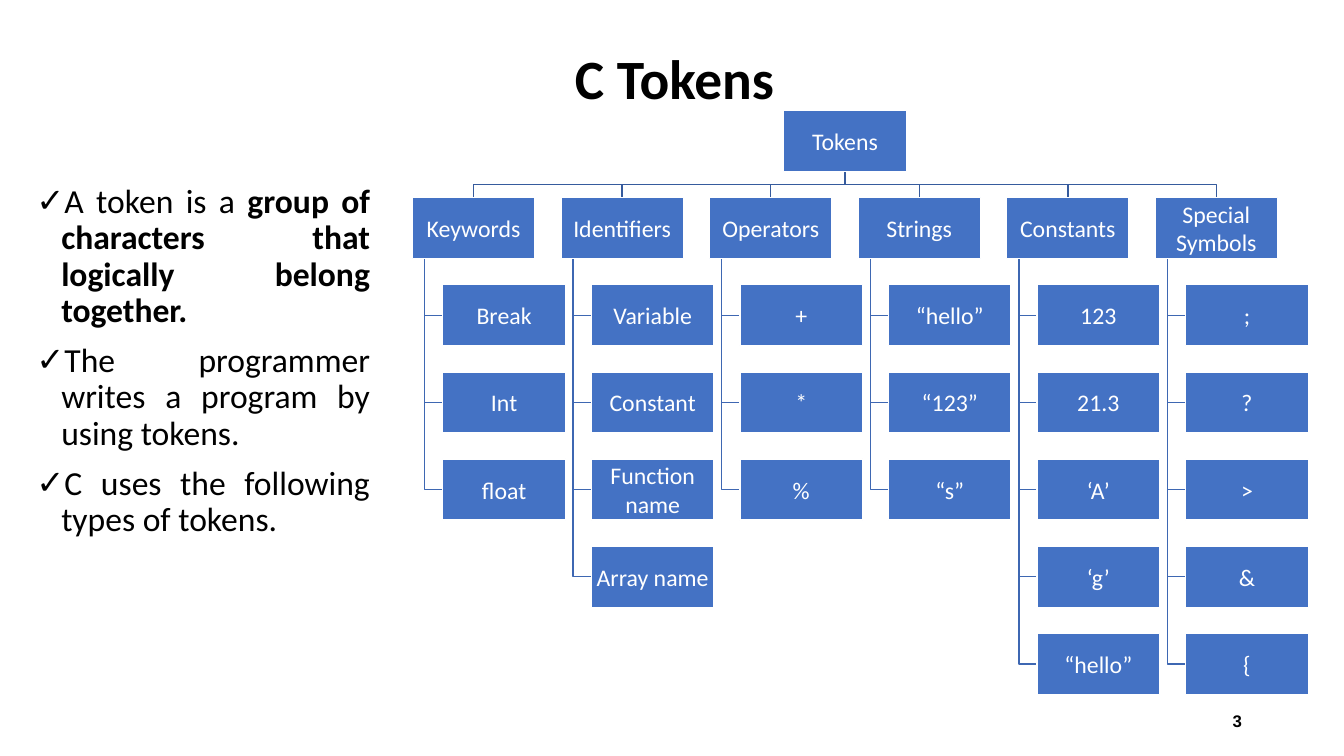
from dataclasses import dataclass

from lxml.etree import SubElement
from pptx import Presentation
from pptx.dml.color import RGBColor
from pptx.enum.shapes import MSO_SHAPE
from pptx.enum.text import MSO_ANCHOR, MSO_AUTO_SIZE, PP_ALIGN
from pptx.oxml.ns import qn
from pptx.util import Cm, Pt


@dataclass(frozen=True)
class Theme:
    """Colours, fonts and type sizes of the slide."""
    ink: str = "000000"
    paper: str = "FFFFFF"
    box: str = "4472C4"
    root_line: str = "365B9D"
    leaf_line: str = "3E67B2"
    font: str = "Calibri"
    number_font: str = "Arial"
    title_size: float = 39.6
    body_size: int = 24
    box_size: int = 17
    number_size: int = 12


THEME = Theme()

BULLETS = [
    [("A token is a ", False),
     ("group of characters that logically belong together.", True)],
    [("The programmer writes a program by using tokens.", False)],
    [("C uses the following types of tokens.", False)],
]

TOKENS = {
    "Keywords": ["Break", "Int", "float"],
    "Identifiers": ["Variable", "Constant", "Function name", "Array name"],
    "Operators": ["+", "*", "%"],
    "Strings": ["“hello”", "“123”", "“s”"],
    "Constants": ["123", "21.3", "‘A’", "‘g’", "“hello”"],
    "Special Symbols": [";", "?", ">", "&", "{"],
}


def write(p, text, size, color=THEME.ink, font=THEME.font, bold=False, align=None):
    """Add a formatted run to a paragraph."""
    if align is not None:
        p.alignment = align
    r = p.add_run()
    r.text = text
    r.font.size, r.font.name, r.font.bold = Pt(size), font, bold
    r.font.color.rgb = RGBColor.from_string(color)


def place(sp, left, top, width, height):
    """Move and size a shape, in centimetres."""
    sp.left, sp.top, sp.width, sp.height = map(Cm, (left, top, width, height))


def add_title(slide, text, *box):
    """Fill the title placeholder."""
    sp = slide.shapes.title
    place(sp, *box)
    tf = sp.text_frame
    tf.auto_size, tf.vertical_anchor = MSO_AUTO_SIZE.NONE, MSO_ANCHOR.MIDDLE
    p = tf.paragraphs[0]
    p.line_spacing = 0.9
    write(p, text, THEME.title_size, bold=True, align=PP_ALIGN.CENTER)


def add_bullets(slide, items, *box):
    """Fill the body placeholder with check-marked paragraphs."""
    sp = slide.placeholders[1]
    place(sp, *box)
    tf = sp.text_frame
    tf.auto_size, tf.vertical_anchor = MSO_AUTO_SIZE.NONE, MSO_ANCHOR.TOP
    for i, runs in enumerate(items):
        p = tf.add_paragraph() if i else tf.paragraphs[0]
        pPr = p._p.get_or_add_pPr()
        pPr.set("marL", str(Cm(0.63)))
        pPr.set("indent", str(-Cm(0.63)))
        SubElement(pPr, qn("a:buChar")).set("char", "✓")
        p.line_spacing, p.space_before = 0.9, Pt(10 if i else 0)
        for text, bold in runs:
            write(p, text, THEME.body_size, bold=bold, align=PP_ALIGN.JUSTIFY)


def add_number(slide, text, *box):
    """Put the page number in a text box."""
    tf = slide.shapes.add_textbox(*map(Cm, box)).text_frame
    tf.word_wrap, tf.vertical_anchor = True, MSO_ANCHOR.MIDDLE
    write(tf.paragraphs[0], text, THEME.number_size, font=THEME.number_font,
          bold=True, align=PP_ALIGN.RIGHT)


def add_branch(slide, points, color):
    """Draw an open line through points given in centimetres."""
    start, *rest = [(Cm(x), Cm(y)) for x, y in points]
    builder = slide.shapes.build_freeform(*start)
    builder.add_line_segments(rest, close=False)
    sp = builder.convert_to_shape()
    sp.shadow.inherit = False
    sp.fill.background()
    sp.line.color.rgb = RGBColor.from_string(color)
    sp.line.width = Pt(1)


def add_node(slide, text, *box):
    """Draw one labelled rectangle of the tree."""
    sp = slide.shapes.add_shape(MSO_SHAPE.RECTANGLE, *map(Cm, box))
    sp.shadow.inherit = False
    sp.fill.solid()
    sp.fill.fore_color.rgb = RGBColor.from_string(THEME.box)
    sp.line.color.rgb = RGBColor.from_string(THEME.paper)
    sp.line.width = Pt(1)
    tf = sp.text_frame
    tf.word_wrap, tf.vertical_anchor = True, MSO_ANCHOR.MIDDLE
    tf.margin_left = tf.margin_right = tf.margin_top = tf.margin_bottom = Cm(0.03)
    write(tf.paragraphs[0], text, THEME.box_size, THEME.paper, align=PP_ALIGN.CENTER)


def add_tree(slide, root, groups, left, top, width, height):
    """Draw the root, its groups in columns and their members below."""
    node_w, node_h, indent = 3.09, 1.54, 0.77
    levels = 2 + max(map(len, groups.values()))
    step_x = (width - indent - node_w) / (len(groups) - 1)
    step_y = (height - node_h) / (levels - 1)
    center = left + (width - indent) / 2
    head_y = top + step_y
    bend_y = (top + node_h + head_y) / 2
    for col, (head, members) in enumerate(groups.items()):
        x = left + col * step_x
        middle, trunk = x + node_w / 2, x + node_w / 10
        add_branch(slide, [(center, top + node_h), (center, bend_y),
                           (middle, bend_y), (middle, head_y)], THEME.root_line)
        for row, member in enumerate(members, 1):
            y = head_y + row * step_y
            add_branch(slide, [(trunk, head_y + node_h), (trunk, y + node_h / 2),
                               (x + indent, y + node_h / 2)], THEME.leaf_line)
            add_node(slide, member, x + indent, y, node_w, node_h)
        add_node(slide, head, x, head_y, node_w, node_h)
    add_node(slide, root, center - node_w / 2, top, node_w, node_h)


def main():
    """Build the slide and save it."""
    prs = Presentation()
    prs.slide_width, prs.slide_height = Cm(33.87), Cm(19.05)
    slide = prs.slides.add_slide(prs.slide_layouts[1])
    add_title(slide, "C Tokens", 9.53, 1.35, 14.94, 1.42)
    add_bullets(slide, BULLETS, 0.66, 4.52, 8.92, 13.64)
    add_number(slide, "3", 23.93, 17.65, 7.62, 1.02)
    add_tree(slide, "Tokens", TOKENS, 10.39, 2.78, 22.58, 14.72)
    prs.save("out.pptx")


if __name__ == "__main__":
    main()
